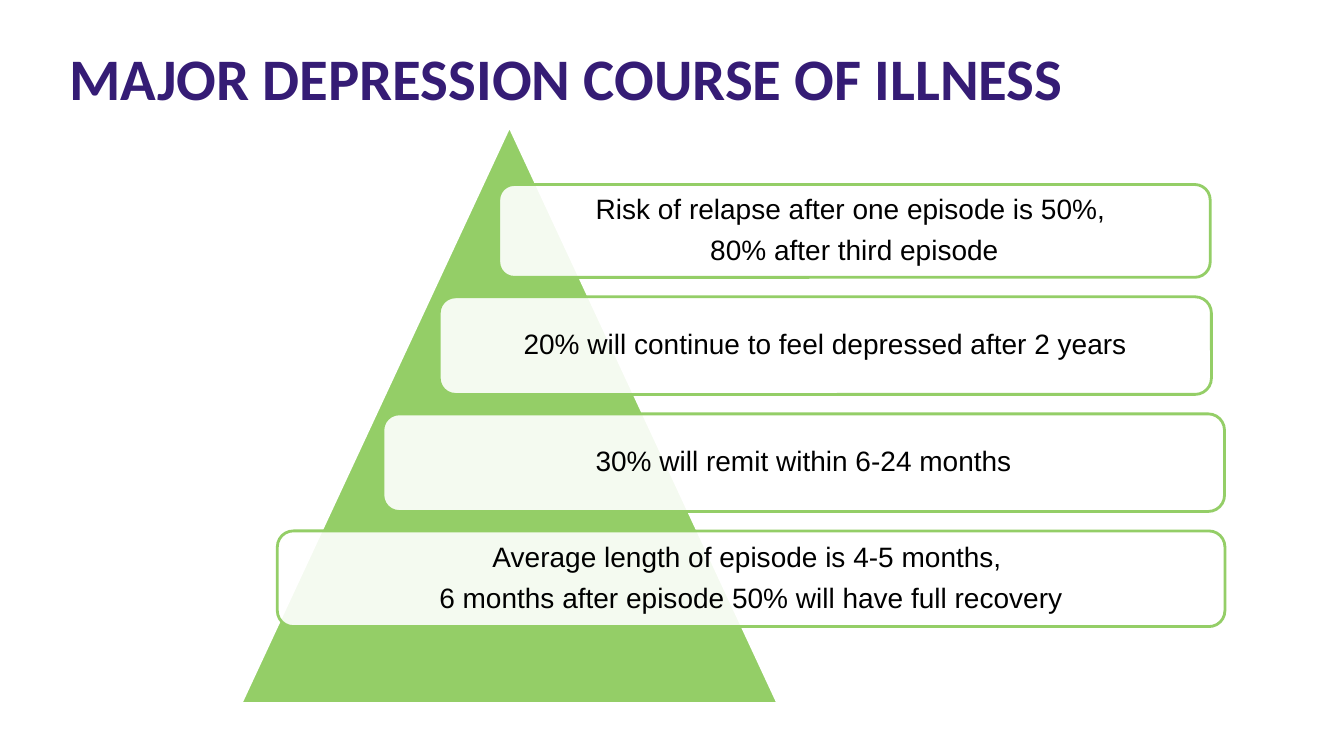
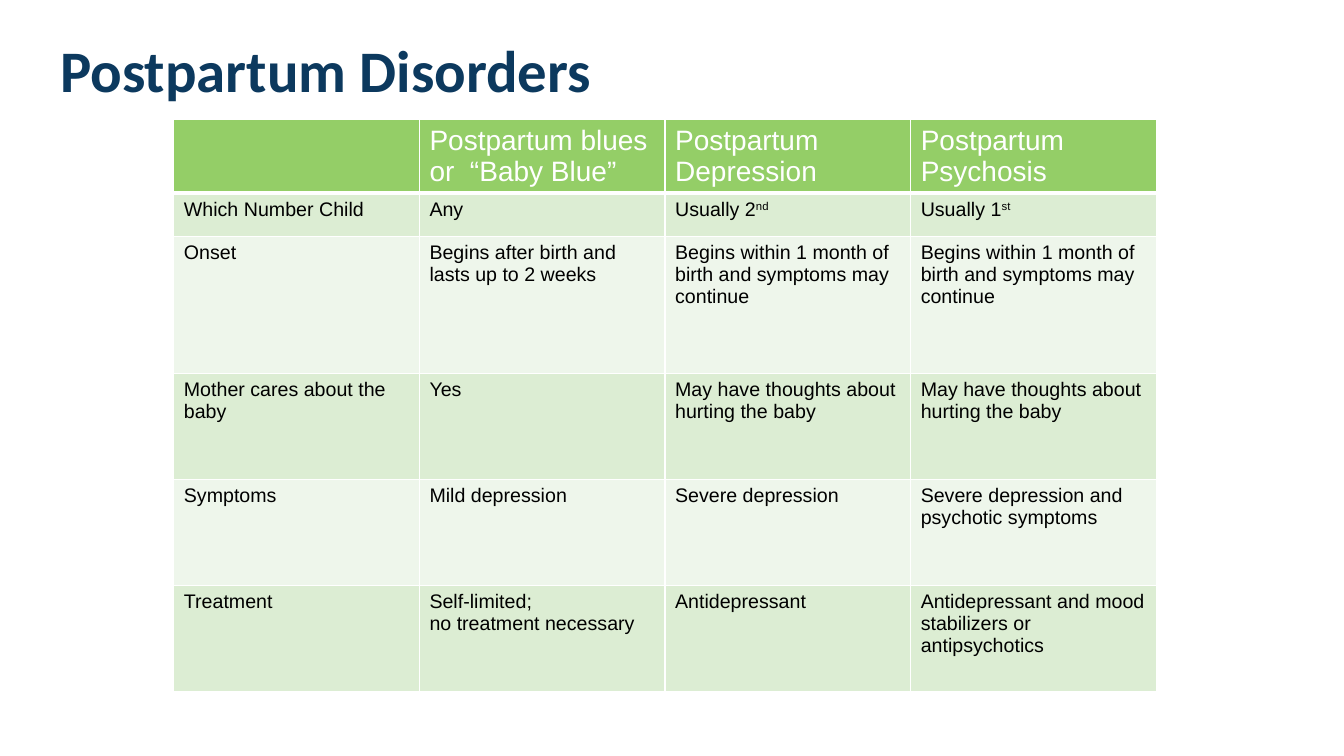
from lxml.etree import SubElement
from pptx import Presentation
from pptx.dml.color import RGBColor
from pptx.enum.shapes import MSO_SHAPE
from pptx.enum.text import MSO_ANCHOR, MSO_AUTO_SIZE, PP_ALIGN
from pptx.oxml import parse_xml
from pptx.oxml.ns import nsdecls, qn
from pptx.util import Cm, Pt

COLORS = {
    "purple": "351C75",
    "navy": "0C395E",
    "green": "94CE67",
    "band_dark": "DCEDD3",
    "band_light": "EEF6EB",
    "white": "FFFFFF",
    "black": "000000",
}
TITLE_FONT = "Calibri"
BODY_FONT = "Arial"

STAGE_TOP = 4.65
STAGE_GAP = 0.49
STAGES = [
    (12.57, 17.93, 2.34, ["Risk of relapse after one episode is 50%, ", "80% after third episode"]),
    (11.07, 19.46, 2.46, ["20% will continue to feel depressed after 2 years"]),
    (9.65, 21.21, 2.46, ["30% will remit within 6-24 months"]),
    (6.99, 23.88, 2.41, ["Average length of episode is 4-5 months, ",
                         "6 months after episode 50% will have full recovery"]),
]

COLUMN_WIDTH = 6.19
ROW_HEIGHTS = [1.85, 1.09, 3.45, 2.67, 2.67, 2.67]
DISORDERS = [
    ["", "Postpartum blues or  “Baby Blue”", "Postpartum Depression", "Postpartum Psychosis"],
    ["Which Number Child", "Any", "Usually 2^nd", "Usually 1^st"],
    ["Onset", "Begins after birth and lasts up to 2 weeks",
     "Begins within 1 month of birth and symptoms may continue",
     "Begins within 1 month of birth and symptoms may continue"],
    ["Mother cares about the baby", "Yes", "May have thoughts about hurting the baby",
     "May have thoughts about hurting the baby"],
    ["Symptoms", "Mild depression", "Severe depression", "Severe depression and psychotic symptoms"],
    ["Treatment", "Self-limited;\nno treatment necessary", "Antidepressant",
     "Antidepressant and mood stabilizers or antipsychotics"],
]


def color(name):
    return RGBColor.from_string(COLORS[name])


def style_font(paragraph, family, size, color_name, bold=False):
    font = paragraph.font
    font.name, font.size, font.bold = family, Pt(size), bold
    font.color.rgb = color(color_name)


def set_insets(frame, inset):
    frame.margin_left = frame.margin_right = Cm(inset)
    frame.margin_top = frame.margin_bottom = Cm(inset)


def add_titled_slide(deck, heading, color_name, left, top):
    slide = deck.slides.add_slide(deck.slide_layouts[5])
    title = slide.shapes.title
    title.left, title.top, title.width, title.height = Cm(left), Cm(top), Cm(28.14), Cm(2.54)
    frame = title.text_frame
    frame.text = heading
    frame.auto_size = MSO_AUTO_SIZE.NONE
    frame.vertical_anchor = MSO_ANCHOR.MIDDLE
    set_insets(frame, 0.25)
    paragraph = frame.paragraphs[0]
    paragraph.alignment = PP_ALIGN.LEFT
    style_font(paragraph, TITLE_FONT, 42, color_name, bold=True)
    return slide


def add_filled_shape(slide, preset, left, top, width, height, fill, line):
    shape = slide.shapes.add_shape(preset, Cm(left), Cm(top), Cm(width), Cm(height))
    shape.shadow.inherit = False
    shape.fill.solid()
    shape.fill.fore_color.rgb = color(fill)
    shape.line.color.rgb = color(line)
    shape.line.width = Pt(2)
    return shape


def set_opacity(shape, percent):
    fill_color = shape._element.spPr.find(qn("a:solidFill"))[0]
    SubElement(fill_color, qn("a:alpha"), val=str(percent * 1000))


def add_stage(slide, left, top, width, height, lines):
    stage = add_filled_shape(slide, MSO_SHAPE.ROUNDED_RECTANGLE, left, top, width, height,
                             "white", "green")
    set_opacity(stage, 90)
    frame = stage.text_frame
    frame.text = "\n".join(lines)
    frame.word_wrap = True
    frame.vertical_anchor = MSO_ANCHOR.MIDDLE
    set_insets(frame, 0.2)
    for paragraph in frame.paragraphs:
        paragraph.alignment = PP_ALIGN.CENTER
        paragraph.line_spacing = 0.9
        style_font(paragraph, BODY_FONT, 20, "black")
    for paragraph in frame.paragraphs[:-1]:
        paragraph.space_after = Pt(8)


def set_borders(cell, bottom_width):
    properties = cell._tc.get_or_add_tcPr()
    widths = {"lnL": 1, "lnR": 1, "lnT": 1, "lnB": bottom_width}
    for position, (side, width) in enumerate(widths.items()):
        properties.insert(position, parse_xml(
            f'<a:{side} {nsdecls("a")} w="{Pt(width)}"><a:solidFill>'
            f'<a:srgbClr val="{COLORS["white"]}"/></a:solidFill></a:{side}>'))


def fill_cell(cell, text, fill, size, color_name, bottom_width):
    base, _, superscript = text.partition("^")
    cell.text = base
    if superscript:
        run = cell.text_frame.paragraphs[0].add_run()
        run.text = superscript
        run._r.get_or_add_rPr().set("baseline", "30000")
    for paragraph in cell.text_frame.paragraphs:
        style_font(paragraph, BODY_FONT, size, color_name)
    cell.fill.solid()
    cell.fill.fore_color.rgb = color(fill)
    set_borders(cell, bottom_width)


def add_grid(slide, left, top, rows):
    columns = len(rows[0])
    table = slide.shapes.add_table(len(rows), columns, Cm(left), Cm(top),
                                   Cm(COLUMN_WIDTH * columns), Cm(sum(ROW_HEIGHTS))).table
    for column in table.columns:
        column.width = Cm(COLUMN_WIDTH)
    for index, (texts, height) in enumerate(zip(rows, ROW_HEIGHTS)):
        table.rows[index].height = Cm(height)
        if index == 0:
            look = ("green", 20, "white", 3)
        else:
            look = ("band_dark" if index % 2 else "band_light", 14, "black", 1)
        for cell, text in zip(table.rows[index].cells, texts):
            fill_cell(cell, text, *look)


def build_course_of_illness(deck):
    slide = add_titled_slide(deck, "MAJOR DEPRESSION COURSE OF ILLNESS", "purple", 1.5, 0.66)
    add_filled_shape(slide, MSO_SHAPE.ISOSCELES_TRIANGLE, 6.07, 3.18, 13.54, 14.55,
                     "green", "white")
    top = STAGE_TOP
    for left, width, height, lines in STAGES:
        add_stage(slide, left, top, width, height, lines)
        top += height + STAGE_GAP


def build_postpartum_disorders(deck):
    slide = add_titled_slide(deck, "Postpartum Disorders", "navy", 1.27, 0.48)
    add_grid(slide, 4.38, 3.02, DISORDERS)


def main():
    deck = Presentation()
    deck.slide_width, deck.slide_height = Cm(33.87), Cm(19.05)
    build_course_of_illness(deck)
    build_postpartum_disorders(deck)
    deck.save("out.pptx")


if __name__ == "__main__":
    main()
